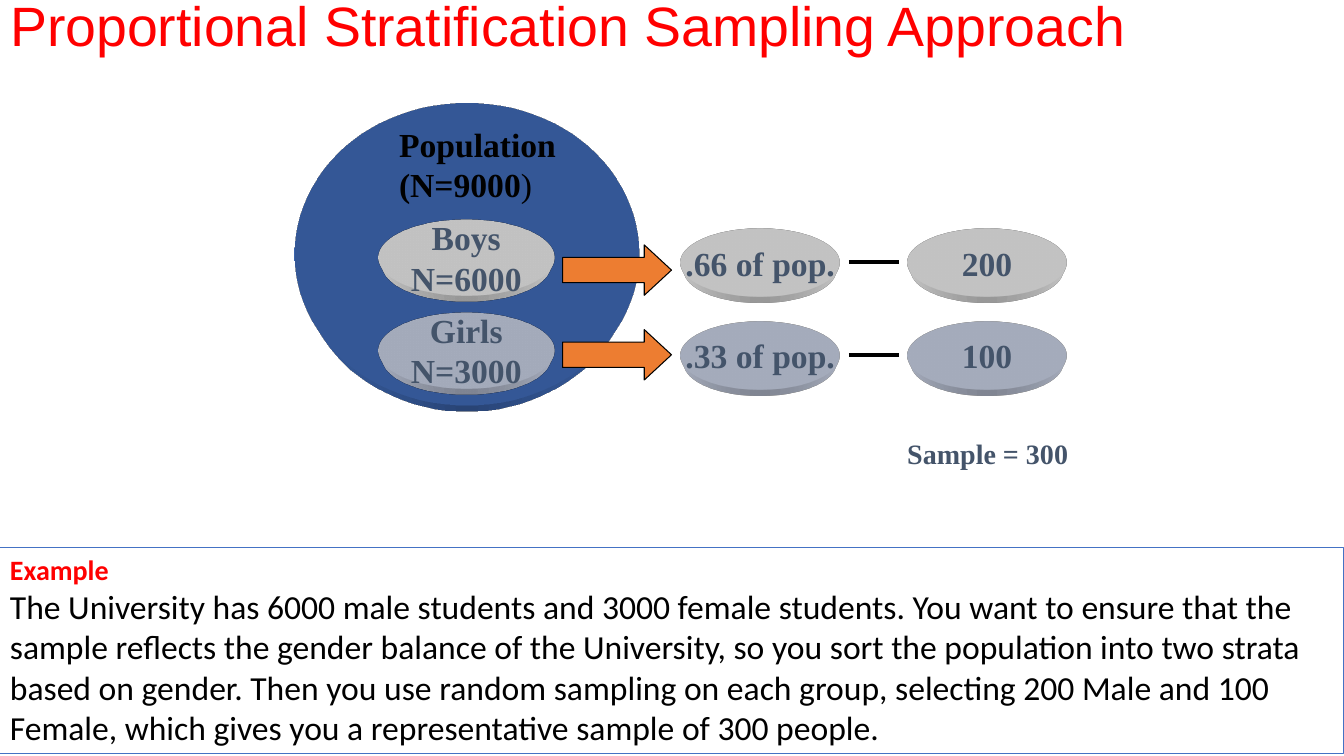
from dataclasses import dataclass
from lxml import etree
from pptx import Presentation
from pptx import util as u
from pptx.dml.color import RGBColor
from pptx.enum import shapes as sh, text as tx
from pptx.oxml import ns, parse_xml


@dataclass(frozen=True)
class Theme:
    red: str = "FF0000"
    blue: str = "4472C4"
    slate: str = "44546A"
    black: str = "000000"
    white: str = "FFFFFF"
    pale: str = "D7E0F5"
    orange: str = "ED7D31"
    serif: str = "Times New Roman"
    sans: str = "Calibri"
    head: str = "Arial"
    title: float = 39.6
    body: float = 24
    small: float = 20


T = Theme()
LEFT, MID = tx.PP_ALIGN.LEFT, tx.PP_ALIGN.CENTER
SOLID = """<a:wrap xmlns:a="http://schemas.openxmlformats.org/drawingml/2006/main">
<a:scene3d><a:camera prst="legacyPerspectiveBottom"/>
<a:lightRig rig="legacyFlat3" dir="b"/></a:scene3d>
<a:sp3d extrusionH="430200" prstMaterial="legacyMatte">
<a:bevelT w="13500" h="13500" prst="angle"/>
<a:bevelB w="13500" h="13500" prst="angle"/>
<a:extrusionClr><a:srgbClr val="%s"/></a:extrusionClr></a:sp3d></a:wrap>"""


def inch(*box):
    return [u.Inches(v) for v in box]


def rgb(color):
    return RGBColor.from_string(color)


def style(item, **form):
    for name, value in form.items():
        setattr(item, name, value)


def write(frame, rows, align=LEFT, **form):
    """Each row is a list of (text, size, color, bold, font) runs."""
    style(frame, **form)
    for i, row in enumerate(rows):
        para = frame.paragraphs[0] if i == 0 else frame.add_paragraph()
        para.alignment = align
        for words, size, color, bold, font in row:
            run = para.add_run()
            run.text = words
            style(run.font, size=u.Pt(size), bold=bold, name=font)
            run.font.color.rgb = rgb(color)


def serif(words, color=T.slate, size=T.body, bold=True):
    return (words, size, color, bold, T.serif)


def paint(shape, fill=None, line=None):
    shape.shadow.inherit = False
    for part, color in ((shape.fill, fill), (shape.line.fill, line)):
        if color:
            part.solid()
            part.fore_color.rgb = rgb(color)
        else:
            part.background()
    if line:
        shape.line.width = u.Pt(0.75)


def label(slide, box, rows):
    frame = slide.shapes.add_textbox(*inch(*box)).text_frame
    write(frame, rows, word_wrap=False)


def disc(slide, box, fill, lines=()):
    oval = slide.shapes.add_shape(sh.MSO_SHAPE.OVAL, *inch(*box))
    paint(oval, fill)
    # Depth below the face
    props = oval.element.find(ns.qn("p:spPr"))
    for part in list(parse_xml(SOLID % fill)):
        props.append(part)
    write(oval.text_frame, [[serif(s)] for s in lines], MID, word_wrap=False,
          vertical_anchor=tx.MSO_ANCHOR.MIDDLE)


def arrow(slide, box):
    shape = slide.shapes.add_shape(sh.MSO_SHAPE.RIGHT_ARROW, *inch(*box))
    shape.adjustments[1] = 0.54
    paint(shape, T.orange, T.black)


def link(slide, x, y, width):
    line = slide.shapes.add_connector(
        sh.MSO_CONNECTOR.STRAIGHT, *inch(x, y, x + width, y))
    line.line.color.rgb = rgb(T.black)
    line.line.width = u.Pt(3)
    etree.SubElement(line.element.find(ns.qn("p:spPr")), ns.qn("a:effectLst"))


def heading(slide, box):
    title = slide.shapes.title
    style(title, **dict(zip(("left", "top", "width", "height"), inch(*box))))
    write(title.text_frame, [[("Proportional Stratification Sampling Approach",
                               T.title, T.red, False, T.head)]],
          word_wrap=True, vertical_anchor=tx.MSO_ANCHOR.MIDDLE)
    title.text_frame.paragraphs[0].line_spacing = 0.9


def diagram(slide, x, y):
    # Population
    disc(slide, (x, y, 3.42, 3), T.blue)
    # Strata inside it
    strata = (("Boys", "N=6000", ".66 of pop.", "200", T.white),
              ("Girls", "N=3000", ".33 of pop.", "100", T.pale))
    step = 0.92
    for i, (name, count, _, _, fill) in enumerate(strata):
        disc(slide, (x + 0.83, y + 1.16 + i * step, 1.75, 0.75), fill,
             (name, count))
    label(slide, (x + 0.94, y + 0.16, 1.77, 0.91),
          [[serif("Population", T.black)],
           [serif("(N=9000", T.black), serif(")", T.black, bold=False)]])
    # Share and sample of each stratum
    for i, (_, _, share, size, fill) in enumerate(strata):
        top = y + 1.25 + i * step
        disc(slide, (x + 3.83, top, 1.58, 0.67), fill, [share])
        disc(slide, (x + 6.08, top, 1.58, 0.67), fill, [size])
        arrow(slide, (x + 2.66, y + 1.41 + i * 0.84, 1.08, 0.5))
        link(slide, x + 5.5, top + 0.33, 0.5)
    label(slide, (x + 5.98, y + 3.26, 1.8, 0.43),
          [[serif("Sample = 300", size=T.small)]])


def example(slide, box):
    panel = slide.shapes.add_shape(sh.MSO_SHAPE.RECTANGLE, *inch(*box))
    paint(panel, line=T.blue)
    story = ("The University has 6000 male students and 3000 female students. "
             "You want to ensure that the sample reflects the gender balance "
             "of the University, so you sort the population into two strata "
             "based on gender. Then you use random sampling on each group, "
             "selecting 200 Male and 100 Female, which gives you a "
             "representative sample of 300 people.")
    write(panel.text_frame, [[("Example", T.small, T.red, True, T.sans)],
                             [(story, T.body, T.black, False, T.sans)]],
          word_wrap=True, vertical_anchor=tx.MSO_ANCHOR.TOP)


def main():
    deck = Presentation()
    style(deck, slide_width=u.Inches(13.33), slide_height=u.Inches(7.5))
    slide = deck.slides.add_slide(deck.slide_layouts[5])
    heading(slide, (0, -0.03, 13.33, 0.63))
    diagram(slide, 2.92, 1.02)
    example(slide, (0, 5.43, 13.33, 2.05))
    deck.save("out.pptx")


if __name__ == "__main__":
    main()
